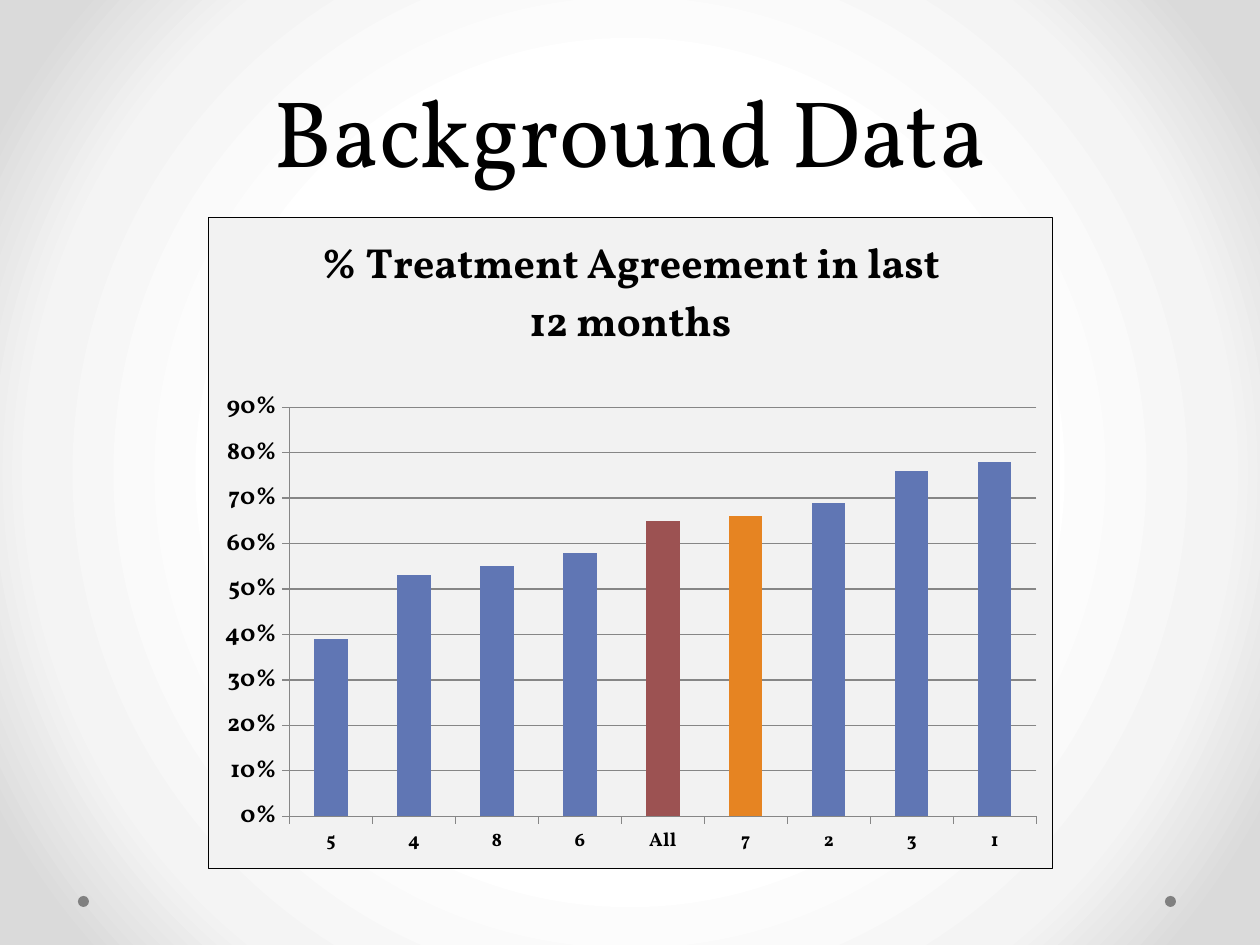
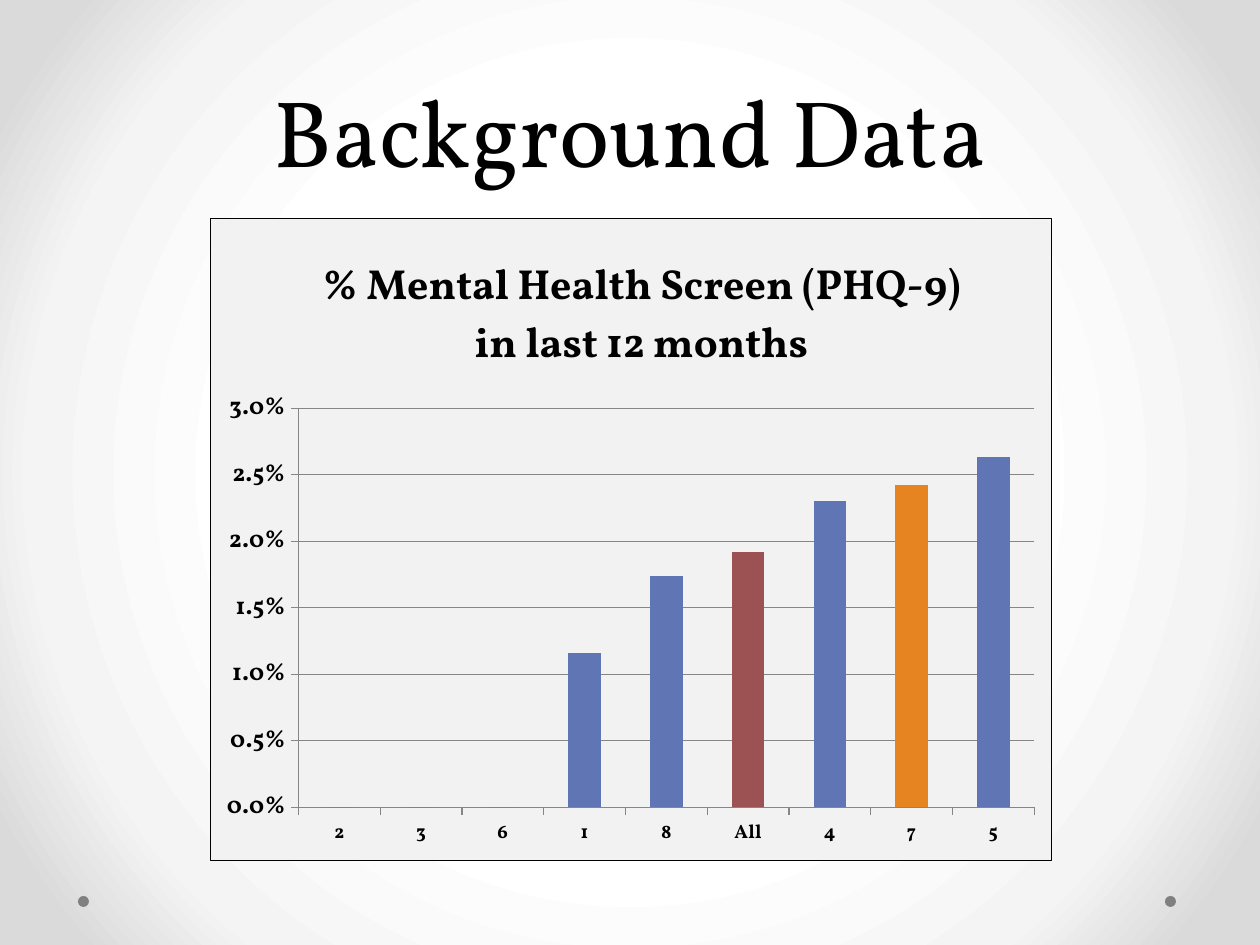
import pptx
import pptx.chart.data
import pptx.dml.color
import pptx.enum.chart
import pptx.enum.shapes
import pptx.enum.text
import pptx.oxml
import pptx.oxml.ns
import pptx.util

RGBColor = pptx.dml.color.RGBColor
Pt = pptx.util.Pt
qn = pptx.oxml.ns.qn

PX_PER_INCH = 126
PAGE_WIDTH, PAGE_HEIGHT = 1260, 945
FONT = "Vollkorn"
BLACK = RGBColor(0x00, 0x00, 0x00)
PANEL = RGBColor(0xF2, 0xF2, 0xF2)
AXIS_GREY = RGBColor(0x86, 0x86, 0x86)
DOT_GREY = RGBColor(0x80, 0x80, 0x80)
BLUE = RGBColor(0x60, 0x76, 0xB4)
RED = RGBColor(0x9C, 0x52, 0x52)
ORANGE = RGBColor(0xE6, 0x84, 0x22)
HIGHLIGHTS = {"All": RED, "7": ORANGE}

BACKGROUND_STOPS = [(50, "FFFFFF"), (76, "F4F4F4"), (92, "DADADA")]
TITLE_BOX = (63, 0, 1134, 193)
DOT_LEFTS = (78, 1165)
DOT_TOP, DOT_SIZE = 896, 11

# Boxes are left, top, width, height in px on the page.
SLIDES = [
    {
        "title": "Background Data",
        "chart_title": "% Treatment Agreement in last 12 months",
        "clinics": ["5", "4", "8", "6", "All", "7", "2", "3", "1"],
        "rates": [0.39, 0.53, 0.55, 0.58, 0.65, 0.66, 0.69, 0.76, 0.78],
        "axis": (0.9, 0.1, "0%"),
        "chart_box": (208, 217, 845, 652),
        "plot_box": (289, 407, 748, 410),
        "chart_title_at": (313, 226),
    },
    {
        "title": "Background Data",
        "chart_title": "% Mental Health Screen (PHQ-9) in last 12 months",
        "clinics": ["2", "3", "6", "1", "8", "All", "4", "7", "5"],
        "rates": [0, 0, 0, 0.0116, 0.0174, 0.0192, 0.023, 0.0242, 0.0263],
        "axis": (0.03, 0.005, "0.0%"),
        "chart_box": (210, 218, 842, 643),
        "plot_box": (298, 408, 737, 400),
        "chart_title_at": (314, 247),
    },
]


def px(length):
    return pptx.util.Emu(round(length * 914400 / PX_PER_INCH))


def px_box(box):
    return [px(length) for length in box]


def style_font(font, size, bold=False):
    font.name = FONT
    font.size = Pt(size)
    font.bold = bold
    font.color.rgb = BLACK


def set_background(master):
    """Give the master a radial gradient from white to grey."""
    stops = "".join(
        f'<a:gs pos="{percent * 1000}"><a:srgbClr val="{color}"/></a:gs>'
        for percent, color in BACKGROUND_STOPS
    )
    gradient = pptx.oxml.parse_xml(
        f'<a:gradFill {pptx.oxml.ns.nsdecls("a")} rotWithShape="1"><a:gsLst>{stops}</a:gsLst>'
        '<a:path path="circle"><a:fillToRect l="50000" t="50000" r="50000" b="50000"/>'
        "</a:path></a:gradFill>"
    )
    master.background.fill.solid()
    solid = master.element.find(".//" + qn("p:bgPr")).find(qn("a:solidFill"))
    solid.getparent().replace(solid, gradient)


def add_master_dots(master, page):
    """Draw the footer dots on a page, then move them to the master."""
    for left in DOT_LEFTS:
        dot = page.shapes.add_shape(
            pptx.enum.shapes.MSO_SHAPE.OVAL, *px_box((left, DOT_TOP, DOT_SIZE, DOT_SIZE))
        )
        dot.shadow.inherit = False
        dot.fill.solid()
        dot.fill.fore_color.rgb = DOT_GREY
        dot.line.fill.background()
        master.element.find(".//" + qn("p:spTree")).append(dot.element)


def fill_title(page, text):
    title = page.shapes.title
    title.left, title.top, title.width, title.height = px_box(TITLE_BOX)
    frame = title.text_frame
    frame.auto_size = pptx.enum.text.MSO_AUTO_SIZE.NONE
    frame.vertical_anchor = pptx.enum.text.MSO_ANCHOR.BOTTOM
    para = frame.paragraphs[0]
    para.alignment = pptx.enum.text.PP_ALIGN.CENTER
    para.line_spacing = Pt(58)
    span = para.add_run()
    span.text = text
    style_font(span.font, 54)


def set_layout(holder, position, box, chart_box, target=""):
    """Place a chart part by fractions of the chart's own box."""
    left, top, width, height = chart_box
    fractions = [
        (box[0] - left) / width,
        (box[1] - top) / height,
        *(length / whole for length, whole in zip(box[2:], (width, height))),
    ]
    modes = '<c:xMode val="edge"/><c:yMode val="edge"/>'
    values = "".join(
        f'<c:{name} val="{value:.4f}"/>' for name, value in zip("xywh", fractions)
    )
    present = holder.find(qn("c:layout"))
    if present is not None:
        holder.remove(present)
    holder.insert(position, pptx.oxml.parse_xml(
        f'<c:layout {pptx.oxml.ns.nsdecls("c")}><c:manualLayout>{target}{modes}{values}'
        "</c:manualLayout></c:layout>"
    ))


def panel_properties(outline):
    return pptx.oxml.parse_xml(
        f'<c:spPr {pptx.oxml.ns.nsdecls("c", "a")}>'
        f'<a:solidFill><a:srgbClr val="{PANEL}"/></a:solidFill>{outline}</c:spPr>'
    )


def style_axis(axis, size):
    style_font(axis.tick_labels.font, size, bold=True)
    axis.major_tick_mark = pptx.enum.chart.XL_TICK_MARK.OUTSIDE
    axis.minor_tick_mark = pptx.enum.chart.XL_TICK_MARK.NONE
    axis.format.line.color.rgb = AXIS_GREY
    axis.format.line.width = Pt(0.75)


def add_rate_chart(page, content):
    maximum, step, number_format = content["axis"]
    chart_box = content["chart_box"]
    data = pptx.chart.data.CategoryChartData(number_format=number_format)
    data.categories = content["clinics"]
    data.add_series(content["chart_title"], content["rates"])
    chart = page.shapes.add_chart(
        pptx.enum.chart.XL_CHART_TYPE.COLUMN_CLUSTERED, *px_box(chart_box), data
    ).chart
    style_font(chart.font, 10)
    chart.has_legend = False

    chart.has_title = True
    span = chart.chart_title.text_frame.paragraphs[0].add_run()
    span.text = content["chart_title"]
    style_font(span.font, 24, bold=True)

    plot = chart.plots[0]
    plot.gap_width = 150
    plot.vary_by_categories = False
    bars = plot.series[0]
    bars.format.fill.solid()
    bars.format.fill.fore_color.rgb = BLUE
    for index, clinic in enumerate(content["clinics"]):
        if clinic in HIGHLIGHTS:
            fill = bars.points[index].format.fill
            fill.solid()
            fill.fore_color.rgb = HIGHLIGHTS[clinic]

    style_axis(chart.category_axis, 11)
    rate_axis = chart.value_axis
    style_axis(rate_axis, 14)
    rate_axis.minimum_scale, rate_axis.maximum_scale = 0, maximum
    rate_axis.major_unit = step
    rate_axis.tick_labels.number_format = number_format
    rate_axis.tick_labels.number_format_is_linked = False
    rate_axis.has_major_gridlines = True
    gridline = rate_axis.major_gridlines.format.line
    gridline.color.rgb = AXIS_GREY
    gridline.width = Pt(0.75)

    chart_node = chart.element.find(qn("c:chart"))
    plot_area = chart_node.find(qn("c:plotArea"))
    set_layout(chart_node.find(qn("c:title")), 1, content["chart_title_at"], chart_box)
    set_layout(plot_area, 0, content["plot_box"], chart_box, '<c:layoutTarget val="inner"/>')
    plot_area.append(panel_properties("<a:ln><a:noFill/></a:ln>"))
    chart_node.addnext(panel_properties(
        f'<a:ln w="{Pt(0.75)}"><a:solidFill><a:srgbClr val="{BLACK}"/></a:solidFill></a:ln>'
    ))


def main():
    deck = pptx.Presentation()
    deck.slide_width, deck.slide_height = px(PAGE_WIDTH), px(PAGE_HEIGHT)
    title_only = deck.slide_layouts.get_by_name("Title Only")
    set_background(deck.slide_master)
    for number, content in enumerate(SLIDES):
        page = deck.slides.add_slide(title_only)
        if number == 0:
            add_master_dots(deck.slide_master, page)
        fill_title(page, content["title"])
        add_rate_chart(page, content)
    deck.save("out.pptx")


if __name__ == "__main__":
    main()
